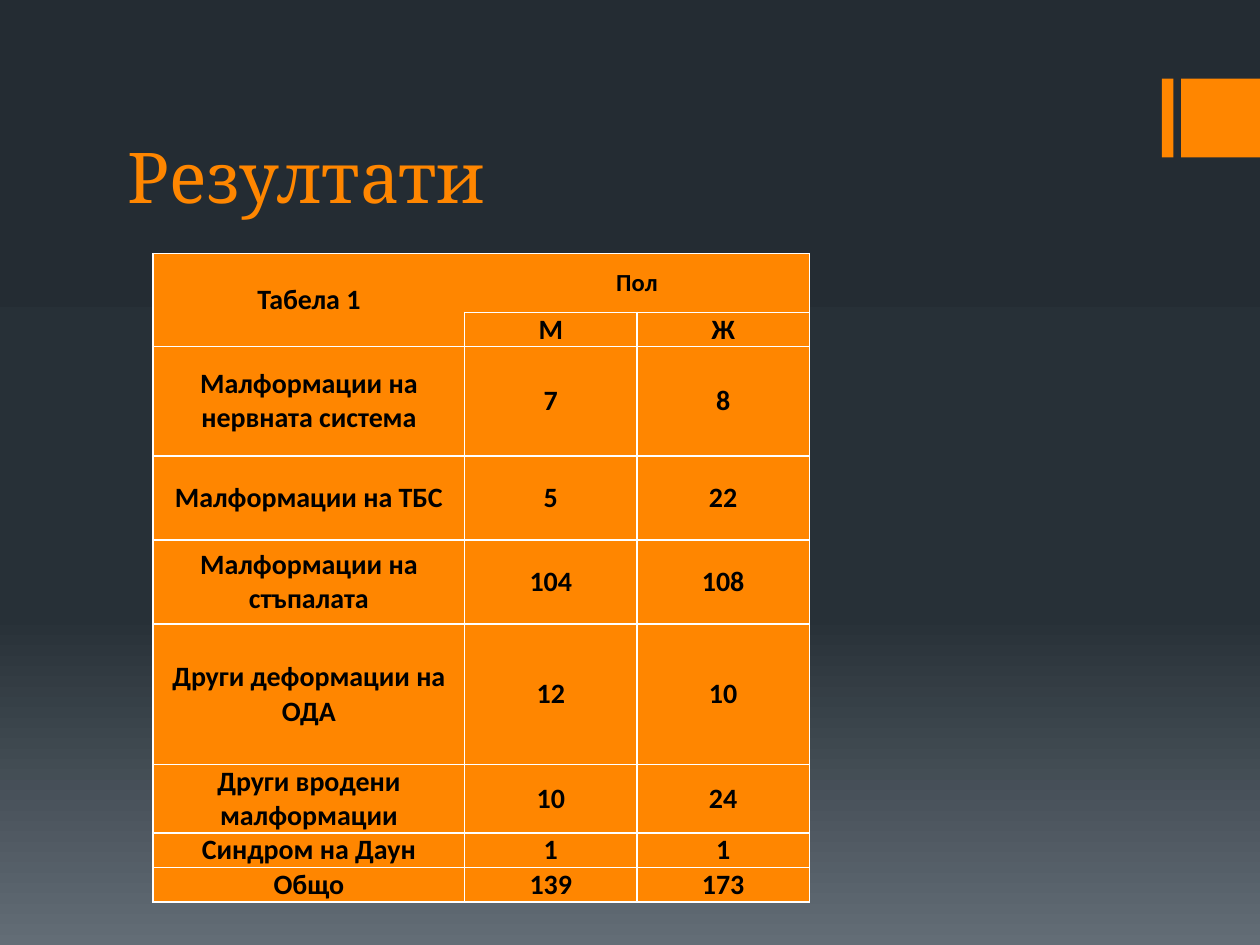
from copy import deepcopy

from lxml import etree
from pptx import Presentation
from pptx.dml.color import RGBColor
from pptx.enum.shapes import MSO_SHAPE
from pptx.enum.text import MSO_ANCHOR, MSO_AUTO_SIZE, PP_ALIGN
from pptx.oxml.ns import qn
from pptx.util import Pt

RECTANGLE = MSO_SHAPE.RECTANGLE
MIDDLE, BOTTOM = MSO_ANCHOR.MIDDLE, MSO_ANCHOR.BOTTOM
CENTER, LEFT = PP_ALIGN.CENTER, PP_ALIGN.LEFT
NO_AUTO_SIZE = MSO_AUTO_SIZE.NONE

ORANGE = RGBColor(0xFF, 0x86, 0x00)
BLACK = RGBColor(0x00, 0x00, 0x00)
WHITE = RGBColor(0xFF, 0xFF, 0xFF)
BACKGROUND_STOPS = [
    (0, RGBColor(0x24, 0x2C, 0x33)),
    (0.65, RGBColor(0x27, 0x30, 0x37)),
    (1, RGBColor(0x63, 0x6D, 0x76)),
]

COLUMN_WIDTHS = [178, 98.5, 98.5]
ROW_HEIGHTS = [33.5, 16, 62.5, 48, 48, 80.5, 32.5, 18, 18]
ROWS = [
    ["Табела 1", "Пол", ""],
    ["", "М", "Ж"],
    ["Малформации на нервната система", "7", "8"],
    ["Малформации на ТБС", "5", "22"],
    ["Малформации на стъпалата", "104", "108"],
    ["Други деформации на ОДА", "12", "10"],
    ["Други вродени малформации", "10", "24"],
    ["Синдром на Даун", "1", "1"],
    ["Общо", "139", "173"],
]
OPEN_SIDES = {(0, 0): "R", (1, 0): "R", (0, 1): "L"}


def apply_format(target, values):
    for name, value in values.items():
        setattr(target, name, value)


def format_font(font, name, size, color, bold):
    apply_format(font, {"name": name, "size": Pt(size), "bold": bold})
    font.color.rgb = color


def paint_background(slide):
    fill = slide.background.fill
    fill.gradient()
    stop_list = slide.element.find(".//" + qn("a:gsLst"))
    stop_list.append(deepcopy(stop_list[0]))
    fill.gradient_angle = 270
    for stop, (position, color) in zip(fill.gradient_stops, BACKGROUND_STOPS):
        stop.position = position
        stop.color.rgb = color


def add_corner_bars(slide, left, top, width, height):
    thin_width = 6.5
    bars = [(left, thin_width), (left + width - height, height)]
    for bar_left, bar_width in bars:
        bar = slide.shapes.add_shape(
            RECTANGLE, Pt(bar_left), Pt(top), Pt(bar_width), Pt(height))
        bar.shadow.inherit = False
        bar.fill.solid()
        bar.fill.fore_color.rgb = ORANGE
        bar.line.fill.background()


def place_title(slide, text, left, top, width, height):
    title = slide.shapes.title
    apply_format(title, {"left": Pt(left), "top": Pt(top),
                         "width": Pt(width), "height": Pt(height)})
    frame = title.text_frame
    frame.text = text
    apply_format(frame, {"vertical_anchor": BOTTOM, "word_wrap": True,
                         "auto_size": NO_AUTO_SIZE})
    paragraph = frame.paragraphs[0]
    paragraph.alignment = LEFT
    format_font(paragraph.runs[0].font, "Cambria", 40, ORANGE, False)


def set_borders(cell, open_side):
    properties = cell._tc.get_or_add_tcPr()
    for index, side in enumerate("LRTB"):
        line = etree.Element(qn("a:ln" + side), w=str(Pt(1)))
        if side == open_side:
            etree.SubElement(line, qn("a:noFill"))
        else:
            fill = etree.SubElement(line, qn("a:solidFill"))
            etree.SubElement(fill, qn("a:srgbClr"), val=str(WHITE))
        properties.insert(index, line)


def format_cell(cell, text, size, side_margin, open_side):
    apply_format(cell, {"vertical_anchor": MIDDLE,
                        "margin_left": Pt(side_margin),
                        "margin_right": Pt(side_margin),
                        "margin_top": 0, "margin_bottom": 0})
    cell.fill.solid()
    cell.fill.fore_color.rgb = ORANGE
    set_borders(cell, open_side)
    if text:
        cell.text = text
        paragraph = cell.text_frame.paragraphs[0]
        paragraph.alignment = CENTER
        format_font(paragraph.runs[0].font, "Calibri", size, BLACK, True)


def add_results_table(slide, left, top):
    table = slide.shapes.add_table(
        len(ROW_HEIGHTS), len(COLUMN_WIDTHS), Pt(left), Pt(top),
        Pt(sum(COLUMN_WIDTHS)), Pt(sum(ROW_HEIGHTS))).table
    apply_format(table, {"first_row": False, "horz_banding": False})
    for column, width in zip(table.columns, COLUMN_WIDTHS):
        column.width = Pt(width)
    for row, height in zip(table.rows, ROW_HEIGHTS):
        row.height = Pt(height)
    table.cell(0, 0).merge(table.cell(1, 0))
    table.cell(0, 1).merge(table.cell(0, 2))
    last_row = len(ROWS) - 1
    for row_index, texts in enumerate(ROWS):
        for column_index, text in enumerate(texts):
            is_row_label = column_index == 0 and 1 < row_index < last_row
            format_cell(
                table.cell(row_index, column_index), text,
                size=14 if (row_index, column_index) == (0, 1) else 16,
                side_margin=4.5 if is_row_label else 5,
                open_side=OPEN_SIDES.get((row_index, column_index)))


def main():
    presentation = Presentation()
    apply_format(presentation, {"slide_width": Pt(720), "slide_height": Pt(540)})
    slide = presentation.slides.add_slide(presentation.slide_layouts[5])
    paint_background(slide)
    add_corner_bars(slide, 664, 45, 56, 45)
    place_title(slide, "Резултати", 65.5, 37.5, 576, 90.5)
    add_results_table(slide, 87.5, 145)
    presentation.save("out.pptx")


if __name__ == "__main__":
    main()
